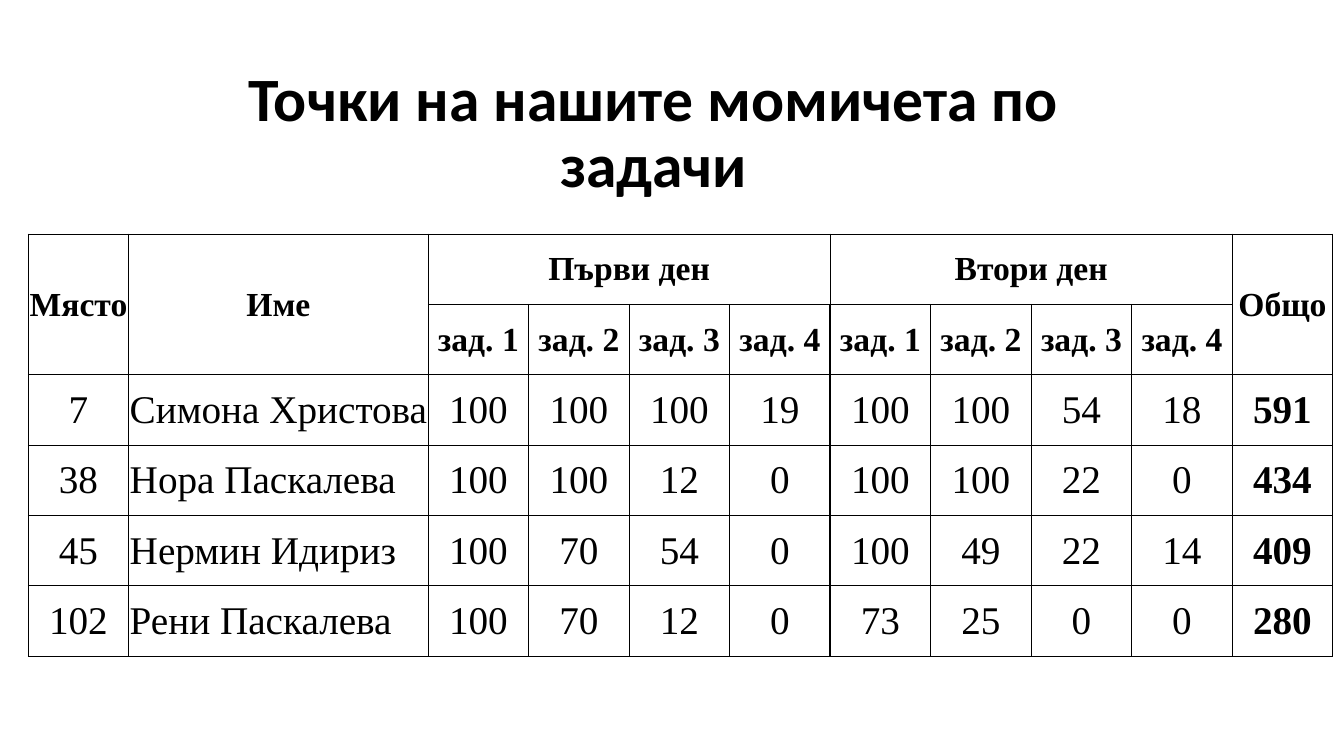
from dataclasses import dataclass

from lxml import etree
from pptx import Presentation
from pptx.dml.color import RGBColor
from pptx.enum import text
from pptx.oxml import ns
from pptx.util import Inches, Pt

TITLE = "Точки на нашите момичета по задачи"
TASKS = ["зад. 1", "зад. 2", "зад. 3", "зад. 4"]
DAYS = ["Първи ден", "Втори ден"]
RESULTS = [
    (7, "Симона Христова", 100, 100, 100, 19, 100, 100, 54, 18, 591),
    (38, "Нора Паскалева", 100, 100, 12, 0, 100, 100, 22, 0, 434),
    (45, "Нермин Идириз", 100, 70, 54, 0, 100, 49, 22, 14, 409),
    (102, "Рени Паскалева", 100, 70, 12, 0, 73, 25, 0, 0, 280),
]
HEADINGS = [
    ["Място", "Име", DAYS[0], "", "", "", DAYS[1], "", "", "", "Общо"],
    ["", "", *TASKS, *TASKS, ""],
]
ROWS = HEADINGS + RESULTS
NAME, FIRST_DAY, SECOND_DAY, TOTAL = 1, 2, 6, 10


@dataclass(frozen=True)
class Theme:
    title_font: str = "Calibri"
    table_font: str = "Times New Roman"
    ink: str = "000000"
    title_size: int = 44
    heading_size: int = 24
    result_size: int = 28
    thin: float = 0.5
    thick: float = 2


THEME = Theme()


def style(paragraph, font_name, size, bold, align):
    paragraph.alignment = align
    for run in paragraph.runs:
        run.font.name = font_name
        run.font.size = Pt(size)
        run.font.bold = bold
        run.font.color.rgb = RGBColor.from_string(THEME.ink)


def set_borders(cell, left, right):
    widths = {"lnL": left, "lnR": right, "lnT": THEME.thin, "lnB": THEME.thin}
    properties = cell._tc.get_or_add_tcPr()
    for side, width in widths.items():
        line = etree.SubElement(properties, ns.qn(f"a:{side}"), w=str(Pt(width)))
        fill = etree.SubElement(line, ns.qn("a:solidFill"))
        etree.SubElement(fill, ns.qn("a:srgbClr"), val=THEME.ink)


def add_title(slide):
    title = slide.shapes.add_textbox(Inches(1.42), Inches(0.73), Inches(10.13), Inches(1.21))
    frame = title.text_frame
    frame.word_wrap = True
    frame.vertical_anchor = text.MSO_ANCHOR.MIDDLE
    frame.text = TITLE
    heading = frame.paragraphs[0]
    heading.line_spacing = 0.9
    style(heading, THEME.title_font, THEME.title_size, True, text.PP_ALIGN.CENTER)


def fill_cell(cell, row, column, value):
    is_heading = row < len(HEADINGS)
    cell.margin_left = cell.margin_right = cell.margin_top = Inches(0.01)
    cell.margin_bottom = 0
    cell.vertical_anchor = text.MSO_ANCHOR.MIDDLE
    cell.text_frame.text = str(value)
    left_aligned = column == NAME and not is_heading
    style(
        cell.text_frame.paragraphs[0],
        THEME.table_font,
        THEME.heading_size if is_heading else THEME.result_size,
        is_heading or column == TOTAL,
        text.PP_ALIGN.LEFT if left_aligned else text.PP_ALIGN.CENTER,
    )
    # The rule between the two days is heavier below the day names.
    set_borders(
        cell,
        THEME.thick if row and column == SECOND_DAY else THEME.thin,
        THEME.thick if row and column == SECOND_DAY - 1 else THEME.thin,
    )
    cell.fill.background()


def add_results(slide):
    width, height, name_width = 12.94, 4.19, 2.97
    columns = len(ROWS[0])
    table = slide.shapes.add_table(
        len(ROWS), columns, Inches(0.28), Inches(2.32), Inches(width), Inches(height)
    ).table
    table.first_row = table.horz_banding = False
    for index, column in enumerate(table.columns):
        share = name_width if index == NAME else (width - name_width) / (columns - 1)
        column.width = Inches(share)
    for row, values in enumerate(ROWS):
        table.rows[row].height = Inches(height / len(ROWS))
        for column, value in enumerate(values):
            fill_cell(table.cell(row, column), row, column, value)
    for column in (0, NAME, TOTAL):
        table.cell(0, column).merge(table.cell(1, column))
    for first in (FIRST_DAY, SECOND_DAY):
        table.cell(0, first).merge(table.cell(0, first + len(TASKS) - 1))


def main():
    deck = Presentation()
    deck.slide_width, deck.slide_height = Inches(13.33), Inches(7.5)
    slide = deck.slides.add_slide(deck.slide_layouts[6])
    add_title(slide)
    add_results(slide)
    deck.save("out.pptx")


if __name__ == "__main__":
    main()
